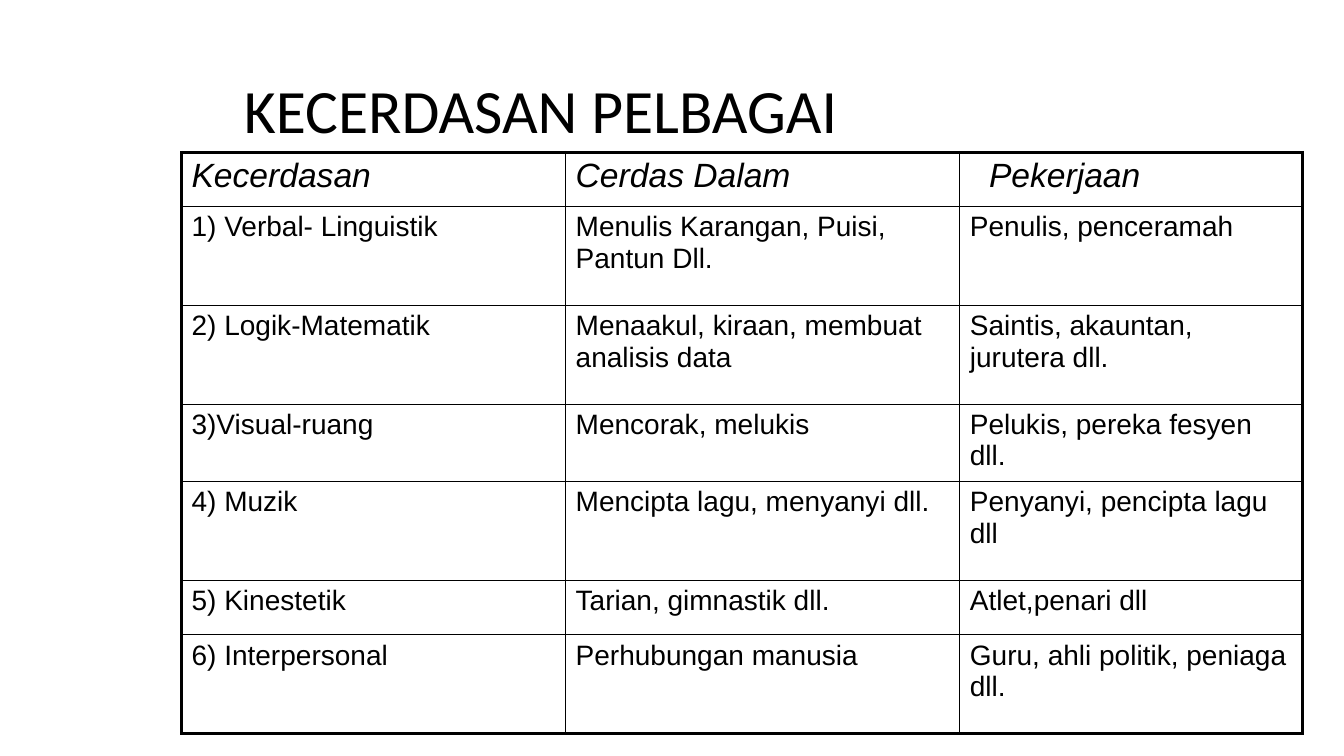
from lxml import etree
from pptx import Presentation
from pptx.dml.color import RGBColor
from pptx.enum.text import MSO_ANCHOR
from pptx.oxml.ns import qn
from pptx.util import Inches, Pt

MIDDLE = MSO_ANCHOR.MIDDLE

# Content
TITLE = "KECERDASAN PELBAGAI"
ROWS = [
    ("Kecerdasan", "Cerdas Dalam", "Pekerjaan"),
    ("1) Verbal- Linguistik", "Menulis Karangan, Puisi, Pantun Dll.", "Penulis, penceramah"),
    ("2) Logik-Matematik", "Menaakul, kiraan, membuat analisis data",
     "Saintis, akauntan, jurutera dll."),
    ("3)Visual-ruang", "Mencorak, melukis", "Pelukis, pereka fesyen dll."),
    ("4) Muzik", "Mencipta lagu, menyanyi dll.", "Penyanyi, pencipta lagu dll"),
    ("5) Kinestetik", "Tarian, gimnastik dll.", "Atlet,penari dll"),
    ("6) Interpersonal", "Perhubungan manusia", "Guru, ahli politik, peniaga dll."),
]
WIDTHS = [3.81, 3.91, 3.4]
HEIGHTS = [0.54, 0.98, 0.98, 0.75, 0.98, 0.54, 0.98]
INDENT = 0.29  # left margin of the last heading


class Theme:
    ink = "000000"
    head_font, body_font = "Calibri", "Arial"
    title, head, body = 44, 24, 20
    thick, thin = 2.25, 1


def style(para, font, size, italic=False):
    for run in para.runs:
        run.font.name = font
        run.font.size = Pt(size)
        run.font.italic = italic
        run.font.color.rgb = RGBColor.from_string(Theme.ink)


def border(cell, outer):
    """Draw four sides, thick where the side is on the table's edge."""
    props = cell._tc.get_or_add_tcPr()
    for side, edge in outer.items():
        width = Theme.thick if edge else Theme.thin
        line = etree.SubElement(props, qn("a:ln" + side), w=str(Pt(width)))
        fill = etree.SubElement(line, qn("a:solidFill"))
        etree.SubElement(fill, qn("a:srgbClr"), val=Theme.ink)


deck = Presentation()
deck.slide_width, deck.slide_height = Inches(13.33), Inches(7.5)
slide = deck.slides.add_slide(deck.slide_layouts[6])

# Title
box = slide.shapes.add_textbox(Inches(2.32), Inches(0.4), Inches(10.1), Inches(1.45))
frame = box.text_frame
frame.word_wrap = True
frame.vertical_anchor = MIDDLE
frame.text = TITLE
frame.paragraphs[0].line_spacing = 0.9
style(frame.paragraphs[0], Theme.head_font, Theme.title)

# Table
last_row, last_col = len(ROWS) - 1, len(WIDTHS) - 1
table = slide.shapes.add_table(
    len(ROWS), len(WIDTHS), Inches(1.8), Inches(1.51),
    Inches(sum(WIDTHS)), Inches(sum(HEIGHTS))).table
table.first_row = table.horz_banding = False
for col, width in zip(table.columns, WIDTHS):
    col.width = Inches(width)
for row, height in zip(table.rows, HEIGHTS):
    row.height = Inches(height)

# Cells
for r, texts in enumerate(ROWS):
    for c, text in enumerate(texts):
        cell = table.cell(r, c)
        cell.text = text
        top = r == 0
        style(cell.text_frame.paragraphs[0], Theme.body_font,
              Theme.head if top else Theme.body, top)
        border(cell, {"L": c == 0, "R": c == last_col, "T": top, "B": r == last_row})
        cell.fill.background()
table.cell(0, last_col).margin_left = Inches(INDENT)

deck.save("out.pptx")
